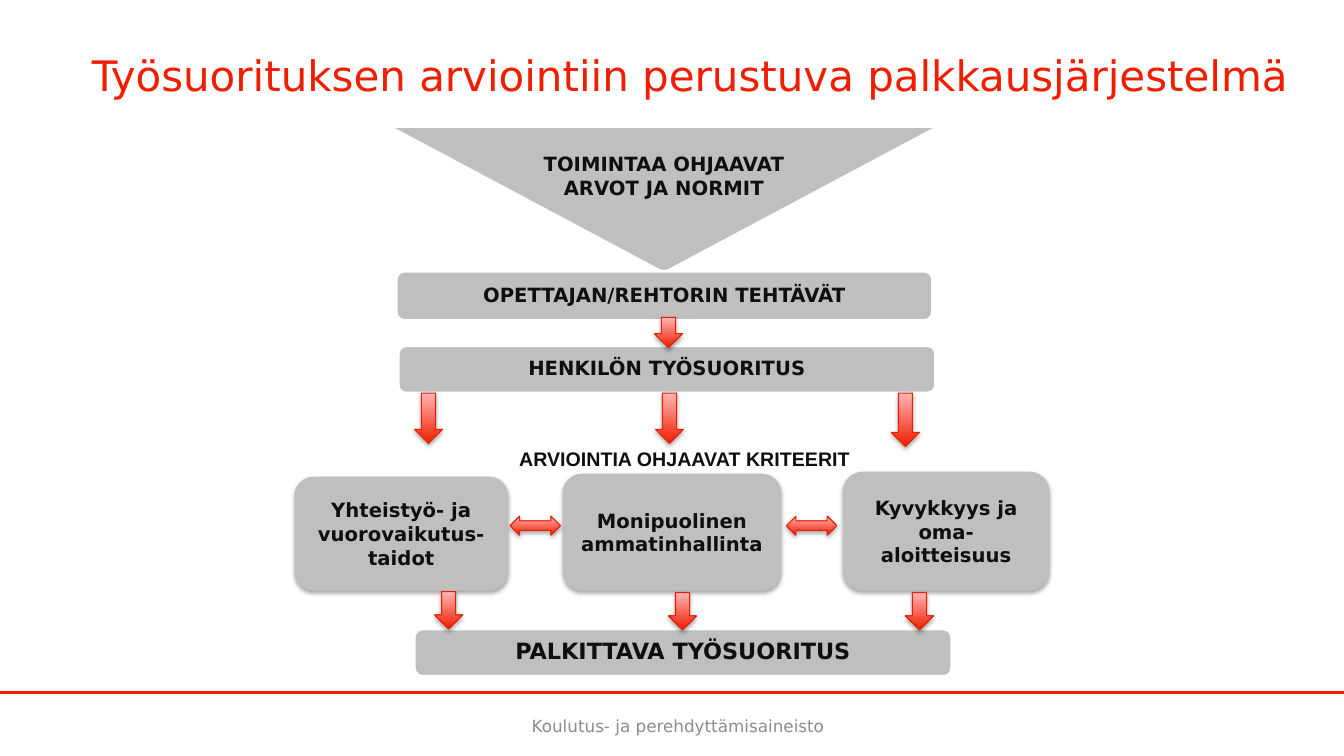
from dataclasses import dataclass

from lxml.etree import SubElement
from pptx import Presentation
from pptx.dml.color import RGBColor
from pptx.enum.shapes import MSO_CONNECTOR as Connector, MSO_SHAPE as Preset
from pptx.enum.text import MSO_ANCHOR as Anchor, PP_ALIGN as Align
from pptx.oxml.ns import qn
from pptx.util import Pt

EMU_PER_PX = 9144


@dataclass(frozen=True)
class Theme:
    red: str = "F01E00"
    pink: str = "FFB6B5"
    arrow_edge: str = "EB1D00"
    panel: str = "BFBFBF"
    ink: str = "0F0F0F"
    muted: str = "8C8C8C"
    white: str = "FFFFFF"
    font: str = "DejaVu Sans"
    label_font: str = "Arial"
    title_size: int = 30
    result_size: int = 16
    body_size: int = 14
    footer_size: int = 12


@dataclass(frozen=True)
class Box:
    left: int
    top: int
    width: int
    height: int

    def emu(self):
        return [px(n) for n in (self.left, self.top, self.width, self.height)]


@dataclass(frozen=True)
class Panel:
    text: str
    box: Box
    size: int


@dataclass(frozen=True)
class Arrow:
    preset: Preset
    box: Box


THEME = Theme()


def px(length: int) -> int:
    return length * EMU_PER_PX


def color(code: str) -> RGBColor:
    return RGBColor.from_string(code)


def down(left: int, top: int, height: int) -> Arrow:
    return Arrow(Preset.DOWN_ARROW, Box(left, top, 28, height))


def sideways(left: int) -> Arrow:
    return Arrow(Preset.LEFT_RIGHT_ARROW, Box(left, 512, 50, 19))


BARS = [
    Panel("OPETTAJAN/REHTORIN TEHTÄVÄT", Box(393, 269, 532, 49), THEME.body_size),
    Panel("HENKILÖN TYÖSUORITUS", Box(395, 343, 533, 47), THEME.body_size),
    Panel("PALKITTAVA TYÖSUORITUS", Box(411, 624, 533, 47), THEME.result_size),
]
CRITERIA = [
    Panel("Yhteistyö- ja vuorovaikutus-taidot", Box(292, 473, 212, 113), THEME.body_size),
    Panel("Monipuolinen ammatinhallinta", Box(558, 470, 217, 116), THEME.body_size),
    Panel("Kyvykkyys ja oma-aloitteisuus", Box(836, 468, 205, 118), THEME.body_size),
]
ARROWS = [
    sideways(506), sideways(780),
    down(649, 315, 30),
    down(411, 390, 50), down(650, 390, 50), down(884, 390, 53),
    down(431, 587, 37), down(663, 588, 37), down(898, 588, 37),
]


def write(shape, text: str, *, size: int = THEME.body_size, ink: str = THEME.ink,
          font: str = THEME.font, bold: bool = True, anchor=Anchor.MIDDLE,
          spacing: float = 1.0) -> None:
    frame = shape.text_frame
    frame.word_wrap = True
    frame.vertical_anchor = anchor
    paragraph = frame.paragraphs[0]
    paragraph.alignment = Align.CENTER
    paragraph.line_spacing = spacing
    run = paragraph.add_run()
    run.text = text
    run.font.name = font
    run.font.size = Pt(size)
    run.font.bold = bold
    run.font.color.rgb = color(ink)


def add_text(slide, box: Box, text: str, **style) -> None:
    write(slide.shapes.add_textbox(*box.emu()), text, **style)


def add_panel(slide, preset: Preset, box: Box):
    shape = slide.shapes.add_shape(preset, *box.emu())
    shape.shadow.inherit = False
    shape.fill.solid()
    shape.fill.fore_color.rgb = color(THEME.panel)
    shape.line.fill.background()
    return shape


def add_shadow(shape) -> None:
    shape.shadow.inherit = False
    effects = shape._element.spPr.find(qn("a:effectLst"))
    shadow = SubElement(effects, qn("a:outerShdw"), blurRad="40000", dist="23000",
                        dir="5400000", rotWithShape="0")
    black = SubElement(shadow, qn("a:srgbClr"), val="000000")
    SubElement(black, qn("a:alpha"), val="35000")


def add_values(slide) -> None:
    triangle = add_panel(slide, Preset.FLOWCHART_MERGE, Box(392, 127, 533, 142))
    write(triangle, "TOIMINTAA OHJAAVAT ARVOT JA NORMIT", anchor=Anchor.TOP)
    triangle.text_frame.margin_top = px(24)
    triangle.text_frame.margin_bottom = 0


def add_bar(slide, bar: Panel) -> None:
    shape = add_panel(slide, Preset.ROUNDED_RECTANGLE, bar.box)
    shape.line.color.rgb = color(THEME.white)
    shape.line.width = Pt(2)
    write(shape, bar.text, size=bar.size, spacing=0.9)


def add_criterion(slide, criterion: Panel) -> None:
    shape = add_panel(slide, Preset.ROUNDED_RECTANGLE, criterion.box)
    add_shadow(shape)
    write(shape, criterion.text, size=criterion.size)


def add_arrow(slide, arrow: Arrow) -> None:
    shape = slide.shapes.add_shape(arrow.preset, *arrow.box.emu())
    shape.fill.gradient()
    shape.fill.gradient_angle = 90
    for stop, code in zip(shape.fill.gradient_stops, (THEME.red, THEME.pink)):
        stop.color.rgb = color(code)
    shape.line.color.rgb = color(THEME.arrow_edge)
    shape.line.width = Pt(0.75)
    add_shadow(shape)


def add_rule(slide) -> None:
    rule = slide.shapes.add_connector(Connector.STRAIGHT, 0, px(687), px(1333), px(687))
    rule.line.color.rgb = color(THEME.red)
    rule.line.width = Pt(2)
    SubElement(rule._element.spPr, qn("a:effectLst"))


def main() -> None:
    presentation = Presentation()
    presentation.slide_width = px(1333)
    presentation.slide_height = px(750)
    slide = presentation.slides.add_slide(presentation.slide_layouts[6])

    add_rule(slide)
    add_text(slide, Box(67, 12, 1236, 125),
             "Työsuorituksen arviointiin perustuva palkkausjärjestelmä",
             size=THEME.title_size, ink=THEME.red, bold=False)
    add_text(slide, Box(417, 695, 511, 40), "Koulutus- ja perehdyttämisaineisto",
             size=THEME.footer_size, ink=THEME.muted, bold=False, anchor=Anchor.BOTTOM)
    add_values(slide)
    for bar in BARS:
        add_bar(slide, bar)
    for criterion in CRITERIA:
        add_criterion(slide, criterion)
    add_text(slide, Box(357, 438, 644, 34), "ARVIOINTIA OHJAAVAT KRITEERIT",
             font=THEME.label_font, anchor=Anchor.TOP)
    for arrow in ARROWS:
        add_arrow(slide, arrow)

    presentation.save("out.pptx")


if __name__ == "__main__":
    main()
